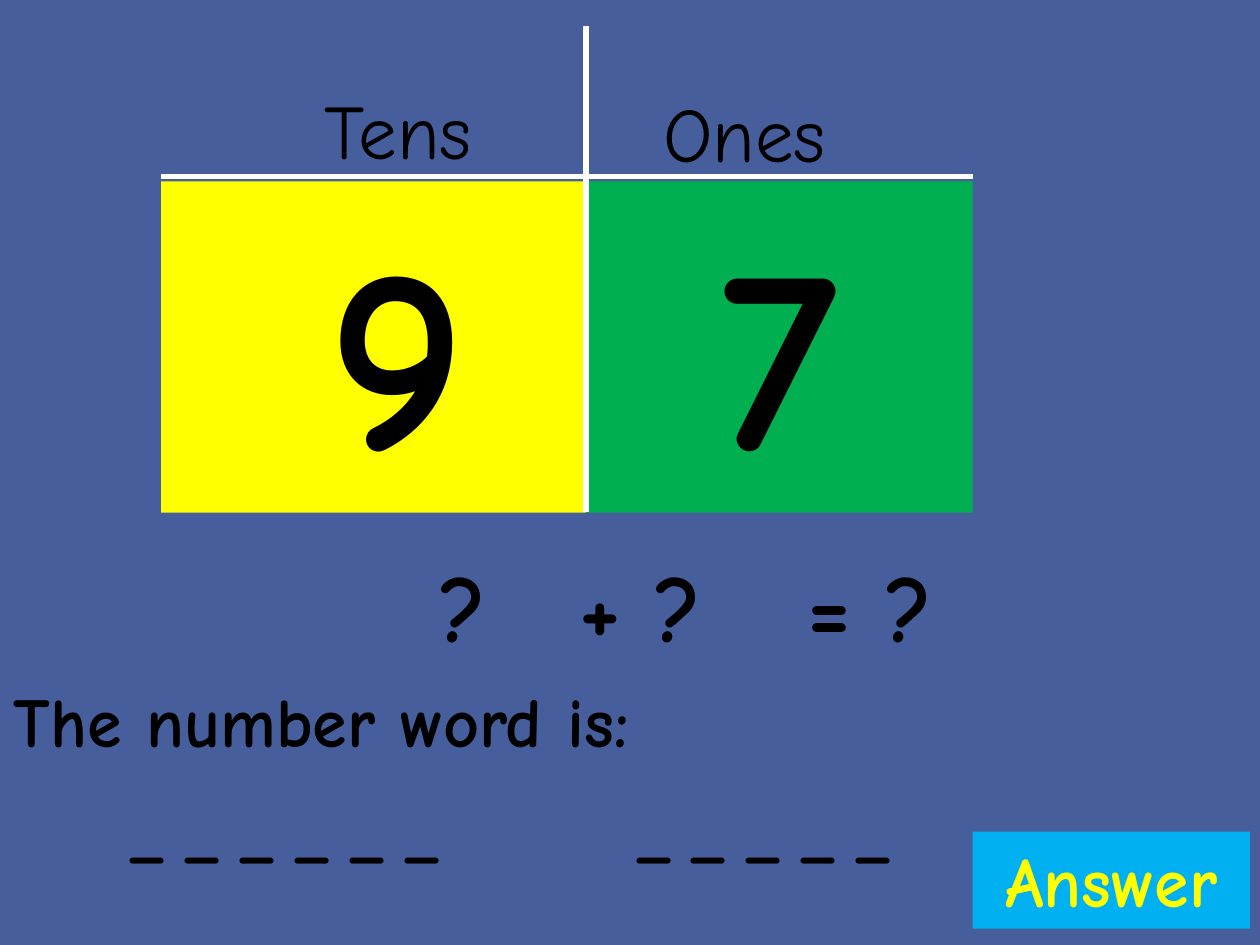
import pptx
import pptx.util
import pptx.dml.color
import pptx.enum.shapes
import pptx.enum.text
import lxml.etree

Inches = pptx.util.Inches
Align = pptx.enum.text.PP_ALIGN
Anchor = pptx.enum.text.MSO_ANCHOR

HUES = {"back": "465E9C", "ink": "000000", "rule": "FFFFFF",
        "tens": "FFFF00", "ones": "00B050", "button": "00B0F0"}


def hue(name):
    return pptx.dml.color.RGBColor.from_string(HUES[name])


def put(text, left, top, width, height, size, bold=True, color="ink",
        fill=None, align=Align.CENTER, anchor=Anchor.TOP, inset=0.1):
    area = [Inches(n) for n in (left, top, width, height)]
    if fill:
        box = slide.shapes.add_shape(
            pptx.enum.shapes.MSO_SHAPE.RECTANGLE, *area)
        box.shadow.inherit = False
        box.fill.solid()
        box.fill.fore_color.rgb = hue(fill)
        box.line.fill.background()
    else:
        box = slide.shapes.add_textbox(*area)
    frame = box.text_frame
    frame.word_wrap = True
    frame.vertical_anchor = anchor
    frame.margin_left = Inches(inset)
    para = frame.paragraphs[0]
    para.alignment = align
    run = para.add_run()
    run.text = text
    run.font.name = "Comic Neue"
    run.font.size = pptx.util.Pt(size)
    run.font.bold = bold
    run.font.color.rgb = hue(color)


deck = pptx.Presentation()
deck.slide_width, deck.slide_height = Inches(10), Inches(7.5)
slide = deck.slides.add_slide(deck.slide_layouts[6])
slide.background.fill.solid()
slide.background.fill.fore_color.rgb = hue("back")

# Place value chart: headings and digits
start, mid, end = 1.28, 4.65, 7.72
for text, left, top in (("Tens", 2.17, 0.4), ("Ones", 4.92, 0.42)):
    put(text, left, top, 1.98, 1.25, 44, bold=False, anchor=Anchor.MIDDLE)
put("9", start, 1.44, mid - start, 2.63, 150, fill="tens", inset=0.47)
put("7", mid, 1.44, end - mid, 2.63, 150, fill="ones")

# Chart rules
for ends in ((start, 1.4, end, 1.4), (mid, 0.21, mid, 4.06)):
    rule = slide.shapes.add_connector(
        pptx.enum.shapes.MSO_CONNECTOR.STRAIGHT, *[Inches(n) for n in ends])
    rule.line.color.rgb = hue("rule")
    rule.line.width = pptx.util.Pt(3)
    lxml.etree.SubElement(rule.element.spPr,
                          pptx.oxml.ns.qn("a:effectLst"))

# Sum
for text, left, width in (("?", 2.85, 1.65), ("+ ?", 4.26, 1.65),
                          ("= ?", 5.68, 2.45)):
    put(text, left, 4.3, width, 1.01, 54)

# Number word and its blanks
put("The number word is:", 0.01, 5.33, 5.81, 0.77, 40, align=Align.LEFT)
for count, left in ((6, 0.21), (5, 4.01)):
    put(" ".join("_" * count), left, 6.28, 4.11, 0.71, 36)

# Answer button
put("Answer", end, 6.6, 2.2, 0.77, 40, color="tens", fill="button")

deck.save("out.pptx")
